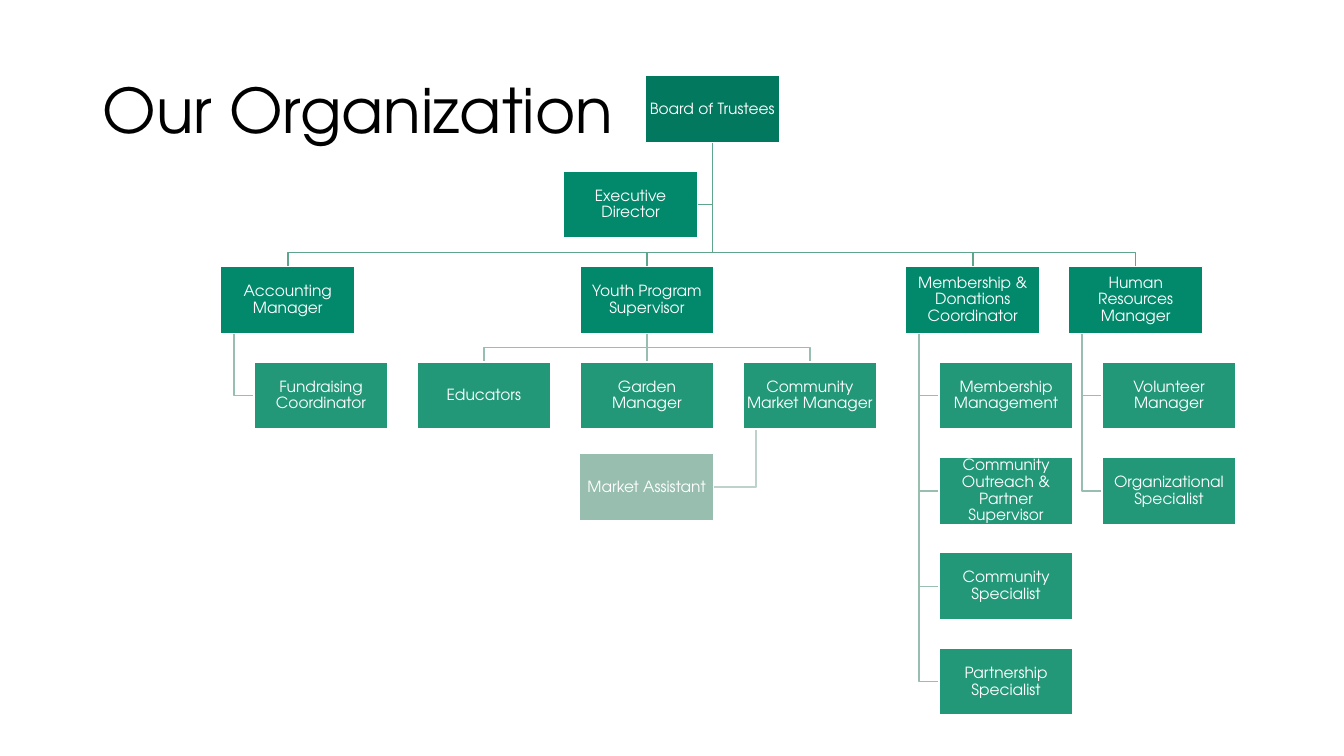
"""Build the organization chart slide."""
from dataclasses import dataclass

from pptx import Presentation
from pptx.dml.color import RGBColor
from pptx.enum.shapes import MSO_CONNECTOR, MSO_SHAPE
from pptx.enum.text import MSO_ANCHOR, MSO_AUTO_SIZE, PP_ALIGN
from pptx.oxml.ns import qn
from pptx.util import Inches, Pt
from lxml import etree

RECT = MSO_SHAPE.RECTANGLE
STRAIGHT = MSO_CONNECTOR.STRAIGHT
MIDDLE = MSO_ANCHOR.MIDDLE
NO_FIT = MSO_AUTO_SIZE.NONE
LEFT, CENTER = PP_ALIGN.LEFT, PP_ALIGN.CENTER
BOTTOM_SITE, TOP_SITE = 2, 0


@dataclass(frozen=True)
class Theme:
    font: str = "TeX Gyre Adventor"
    title_size: int = 44
    box_size: int = 11
    line_width: int = 1
    spacing: float = 0.9
    black: str = "000000"
    white: str = "FFFFFF"
    boxes: tuple = ("02785E", "02886B", "229878", "97BEAF")
    links: tuple = ("5EA58C", "97BEAF", "BDD3CA")


THEME = Theme()
BOX_W = 1.33
BOX_H = BOX_W / 2
TOP, ROW_STEP = 0.75, (6.43 - 0.75) / 6
FIRST_COL, COL_STEP = 2.52, (10.6 - 2.52) / 5
INDENT, STEM, BUS_GAP = 0.33, 0.13, 0.14


def col(index, indent=0.0):
    """Return the left edge of a column."""
    return FIRST_COL + index * COL_STEP + indent


BOXES = [
    ("Board of Trustees", 0, 6.4, 0),
    ("Executive Director", 1, 5.59, 1),
    ("Accounting Manager", 1, col(0, -INDENT), 2),
    ("Youth Program Supervisor", 1, col(2), 2),
    ("Membership & Donations Coordinator", 1, col(4), 2),
    ("Human Resources Manager", 1, col(5), 2),
    ("Fundraising Coordinator", 2, col(0), 3),
    ("Educators", 2, col(1), 3),
    ("Garden Manager", 2, col(2), 3),
    ("Community Market Manager", 2, col(3), 3),
    ("Market Assistant", 3, 5.75, 3.96),
    ("Membership Management", 2, col(4, INDENT), 3),
    ("Community Outreach & Partner Supervisor", 2, col(4, INDENT), 4),
    ("Community Specialist", 2, col(4, INDENT), 5),
    ("Partnership Specialist", 2, col(4, INDENT), 6),
    ("Volunteer Manager", 2, col(5, INDENT), 3),
    ("Organizational Specialist", 2, col(5, INDENT), 4),
]
BRANCHES = [
    (0, "Board of Trustees",
     ["Accounting Manager", "Youth Program Supervisor",
      "Membership & Donations Coordinator", "Human Resources Manager"]),
    (1, "Youth Program Supervisor", ["Educators", "Community Market Manager"]),
]
HANGERS = [
    (0, "Board of Trustees", BOX_W / 2, ["Executive Director"]),
    (1, "Accounting Manager", STEM, ["Fundraising Coordinator"]),
    (1, "Membership & Donations Coordinator", STEM,
     ["Membership Management", "Community Outreach & Partner Supervisor",
      "Community Specialist", "Partnership Specialist"]),
    (1, "Human Resources Manager", STEM,
     ["Volunteer Manager", "Organizational Specialist"]),
    (2, "Community Market Manager", STEM, ["Market Assistant"]),
]


def rgb(value):
    """Return a colour from its hex value."""
    return RGBColor.from_string(value)


def write(tf, text, size, color, align):
    """Write one formatted paragraph into a text frame."""
    tf.word_wrap = True
    tf.auto_size = NO_FIT
    tf.vertical_anchor = MIDDLE
    p = tf.paragraphs[0]
    p.alignment = align
    p.line_spacing = THEME.spacing
    r = p.add_run()
    r.text = text
    r.font.name = THEME.font
    r.font.size = Pt(size)
    r.font.color.rgb = rgb(color)


def add_title(s, text):
    """Place and format the slide title."""
    sp = s.shapes.title
    sp.left, sp.top = Inches(0.92), Inches(0.4)
    sp.width, sp.height = Inches(11.5), Inches(1.45)
    write(sp.text_frame, text, THEME.title_size, THEME.black, LEFT)


def add_box(s, text, level, left, row):
    """Add the box of one position."""
    sp = s.shapes.add_shape(RECT, Inches(left), Inches(TOP + row * ROW_STEP),
                            Inches(BOX_W), Inches(BOX_H))
    sp.shadow.inherit = False
    sp.fill.solid()
    sp.fill.fore_color.rgb = rgb(THEME.boxes[level])
    sp.line.color.rgb = rgb(THEME.white)
    sp.line.width = Pt(THEME.line_width)
    tf = sp.text_frame
    tf.margin_left = tf.margin_right = Inches(0.01)
    tf.margin_top = tf.margin_bottom = Inches(0.01)
    write(tf, text, THEME.box_size, THEME.white, CENTER)
    return sp


def style_link(s, sp, level):
    """Colour a link and send it behind the boxes."""
    sp.line.color.rgb = rgb(THEME.links[level])
    sp.line.width = Pt(THEME.line_width)
    s.shapes._spTree.insert(2, sp._element)


def add_bent_link(s, points, level):
    """Add an open bent line through the points."""
    builder = s.shapes.build_freeform(*points[0])
    builder.add_line_segments(points[1:], close=False)
    sp = builder.convert_to_shape()
    sp.fill.background()
    sp.shadow.inherit = False
    style_link(s, sp, level)


def add_branch(s, parent, child, level):
    """Link a parent's bottom to a child's top by way of a bus."""
    start_x = parent.left + parent.width // 2
    end_x = child.left + child.width // 2
    bus = child.top - Inches(BUS_GAP)
    add_bent_link(s, [(start_x, parent.top + parent.height), (start_x, bus),
                      (end_x, bus), (end_x, child.top)], level)


def add_hanger(s, parent, child, offset, level):
    """Link a stem below a parent to the nearer side of a child."""
    x = parent.left + Inches(offset)
    y = child.top + child.height // 2
    side = child.left if child.left > x else child.left + child.width
    add_bent_link(s, [(x, parent.top + parent.height), (x, y), (side, y)], level)


def add_straight_link(s, parent, child, level):
    """Join a parent to the child directly below it."""
    x = parent.left + parent.width // 2
    sp = s.shapes.add_connector(STRAIGHT, x, parent.top + parent.height,
                                x, child.top)
    sp.begin_connect(parent, BOTTOM_SITE)
    sp.end_connect(child, TOP_SITE)
    style_link(s, sp, level)
    etree.SubElement(sp._element.spPr, qn("a:effectLst"))


def main():
    """Build and save the slide."""
    prs = Presentation()
    prs.slide_width, prs.slide_height = Inches(13.33), Inches(7.5)
    s = prs.slides.add_slide(prs.slide_layouts[5])
    add_title(s, "Our Organization")
    boxes = {box[0]: add_box(s, *box) for box in BOXES}
    for level, parent, children in BRANCHES:
        for child in children:
            add_branch(s, boxes[parent], boxes[child], level)
    for level, parent, offset, children in HANGERS:
        for child in children:
            add_hanger(s, boxes[parent], boxes[child], offset, level)
    add_straight_link(s, boxes["Youth Program Supervisor"],
                      boxes["Garden Manager"], 1)
    prs.save("out.pptx")


if __name__ == "__main__":
    main()
